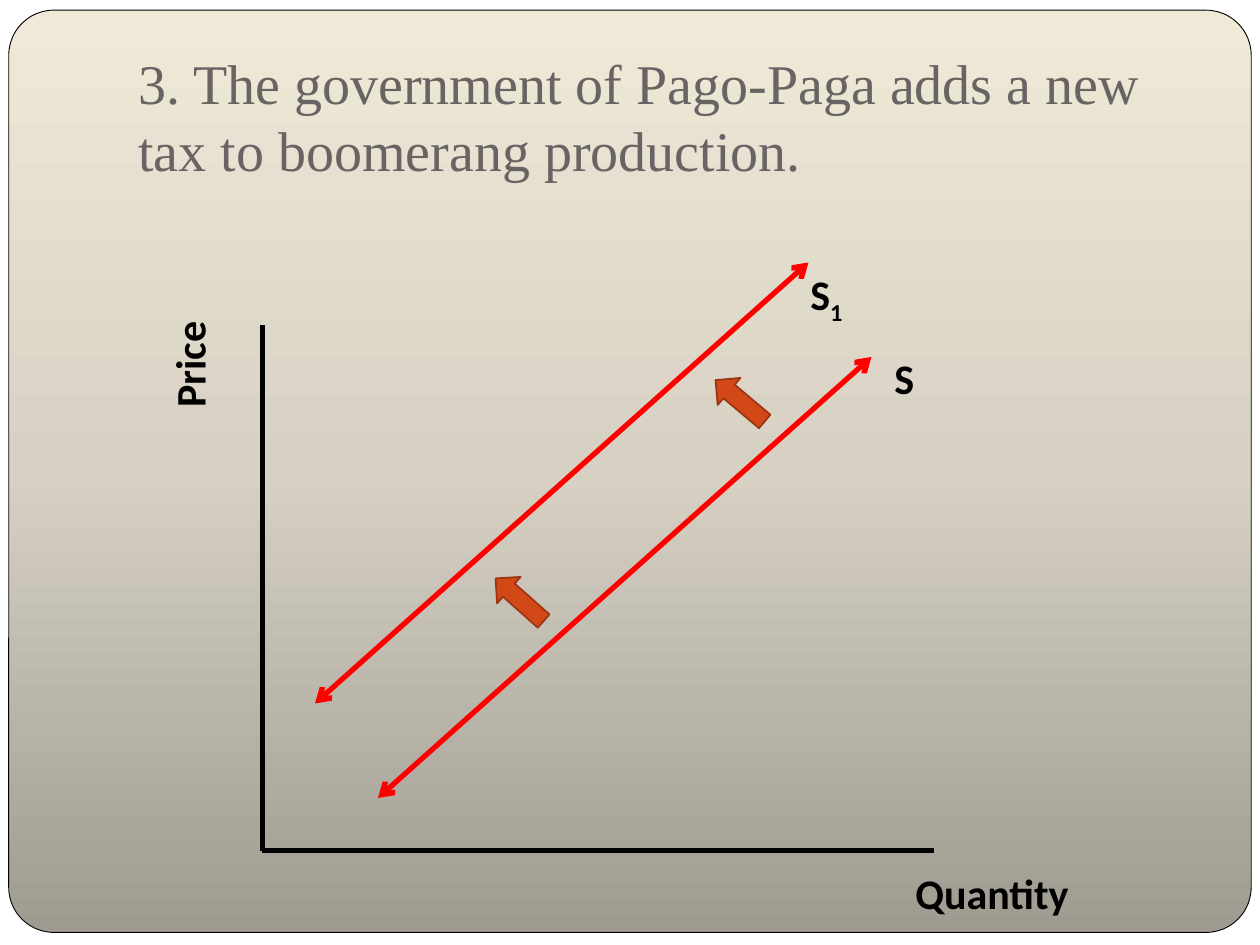
"""Build a slide on a supply curve that shifts left after a new tax."""
from copy import deepcopy

from lxml import etree
from pptx import Presentation
from pptx.dml.color import RGBColor
from pptx.enum.shapes import MSO_CONNECTOR, MSO_SHAPE
from pptx.enum.text import MSO_ANCHOR
from pptx.oxml.ns import qn
from pptx.util import Pt

LINE = MSO_CONNECTOR.STRAIGHT
ROUND = MSO_SHAPE.ROUNDED_RECTANGLE
ARROW = MSO_SHAPE.RIGHT_ARROW
BOTTOM = MSO_ANCHOR.BOTTOM
BLACK = RGBColor(0x00, 0x00, 0x00)
RED = RGBColor(0xFF, 0x00, 0x00)
GREY = RGBColor(0x69, 0x64, 0x64)
RUST = RGBColor(0xD3, 0x48, 0x17)
BROWN = RGBColor(0x9C, 0x35, 0x11)
SHADES = [
    (0, RGBColor(0x9F, 0x9B, 0x91)),
    (0.5, RGBColor(0xD7, 0xD1, 0xC4)),
    (1, RGBColor(0xF0, 0xE9, 0xD8)),
]

TITLE = "3. The government of Pago-Paga adds a new tax to boomerang production."
FRAME = (5, 5.8, 710, 527)
ORIGIN = (150, 486)
AXES = [(150, 186), (534, 486)]
SUPPLY = [(216, 456), (498, 204)]
SHIFT = (-36, -54)
LABELS = [
    ("Quantity", "", (516, 492, 138, 36), 0),
    ("Price", "", (60, 174, 96, 36), 270),
    ("S", "", (504, 198, 66, 36), 0),
    ("S", "1", (456, 150, 66, 36), 0),
]
MARKS = [(404.6, 218.9, 220.1), (278.6, 332.6, 221.6)]
MARK_SIZE = (36.7, 20.2)


def add_shape(slide, kind, box, edge, width):
    shape = slide.shapes.add_shape(kind, *map(Pt, box))
    shape.shadow.inherit = False
    shape.line.color.rgb = edge
    shape.line.width = Pt(width)
    return shape


def add_frame(slide):
    frame = add_shape(slide, ROUND, FRAME, BLACK, 0.5)
    frame.adjustments[0] = 0.049
    fill = frame.fill
    fill.gradient()
    fill.gradient_angle = 90
    stops = frame._element.spPr.find(qn("a:gradFill")).find(qn("a:gsLst"))
    stops.append(deepcopy(stops[0]))
    for stop, (place, shade) in zip(fill.gradient_stops, SHADES):
        stop.position = place
        stop.color.rgb = shade


def add_line(slide, start, end, color, heads=False):
    line = slide.shapes.add_connector(LINE, *map(Pt, (*start, *end)))
    line.line.color.rgb = color
    line.line.width = Pt(3)
    if heads:
        edge = line.line._get_or_add_ln()
        for tag in ("a:headEnd", "a:tailEnd"):
            etree.SubElement(edge, qn(tag), type="arrow")
    etree.SubElement(line._element.spPr, qn("a:effectLst"))


def add_text(slide, text, box, size, font, color, bold=False):
    shape = slide.shapes.add_textbox(*map(Pt, box))
    frame = shape.text_frame
    frame.word_wrap = True
    para = frame.paragraphs[0]
    para.text = text
    para.font.size = Pt(size)
    para.font.name = font
    para.font.color.rgb = color
    para.font.bold = bold
    for run in para.runs:
        style(run, size, font, color, bold)
    return shape


def style(run, size, font, color, bold):
    run.font.size = Pt(size)
    run.font.name = font
    run.font.color.rgb = color
    run.font.bold = bold


def add_label(slide, text, sub, box, turn):
    look = (24, "Calibri", BLACK, True)
    label = add_text(slide, text, box, *look)
    label.rotation = turn
    if sub:
        run = label.text_frame.paragraphs[0].add_run()
        run.text = sub
        style(run, *look)
        run._r.get_or_add_rPr().set("baseline", "-25000")


def main():
    deck = Presentation()
    deck.slide_width, deck.slide_height = Pt(720), Pt(540)
    slide = deck.slides.add_slide(deck.slide_layouts[6])
    add_frame(slide)

    title = add_text(slide, TITLE, (72, 21.6, 612, 90), 32, "Times New Roman", GREY)
    title.text_frame.vertical_anchor = BOTTOM
    title.text_frame.margin_bottom = Pt(7.2)

    for end in AXES:
        add_line(slide, ORIGIN, end, BLACK)
    moved = [(x + SHIFT[0], y + SHIFT[1]) for x, y in SUPPLY]
    for curve in (SUPPLY, moved):
        add_line(slide, *curve, RED, heads=True)
    for left, top, turn in MARKS:
        mark = add_shape(slide, ARROW, (left, top, *MARK_SIZE), BROWN, 1)
        mark.rotation = turn
        mark.fill.solid()
        mark.fill.fore_color.rgb = RUST
    for label in LABELS:
        add_label(slide, *label)

    deck.save("out.pptx")


if __name__ == "__main__":
    main()
